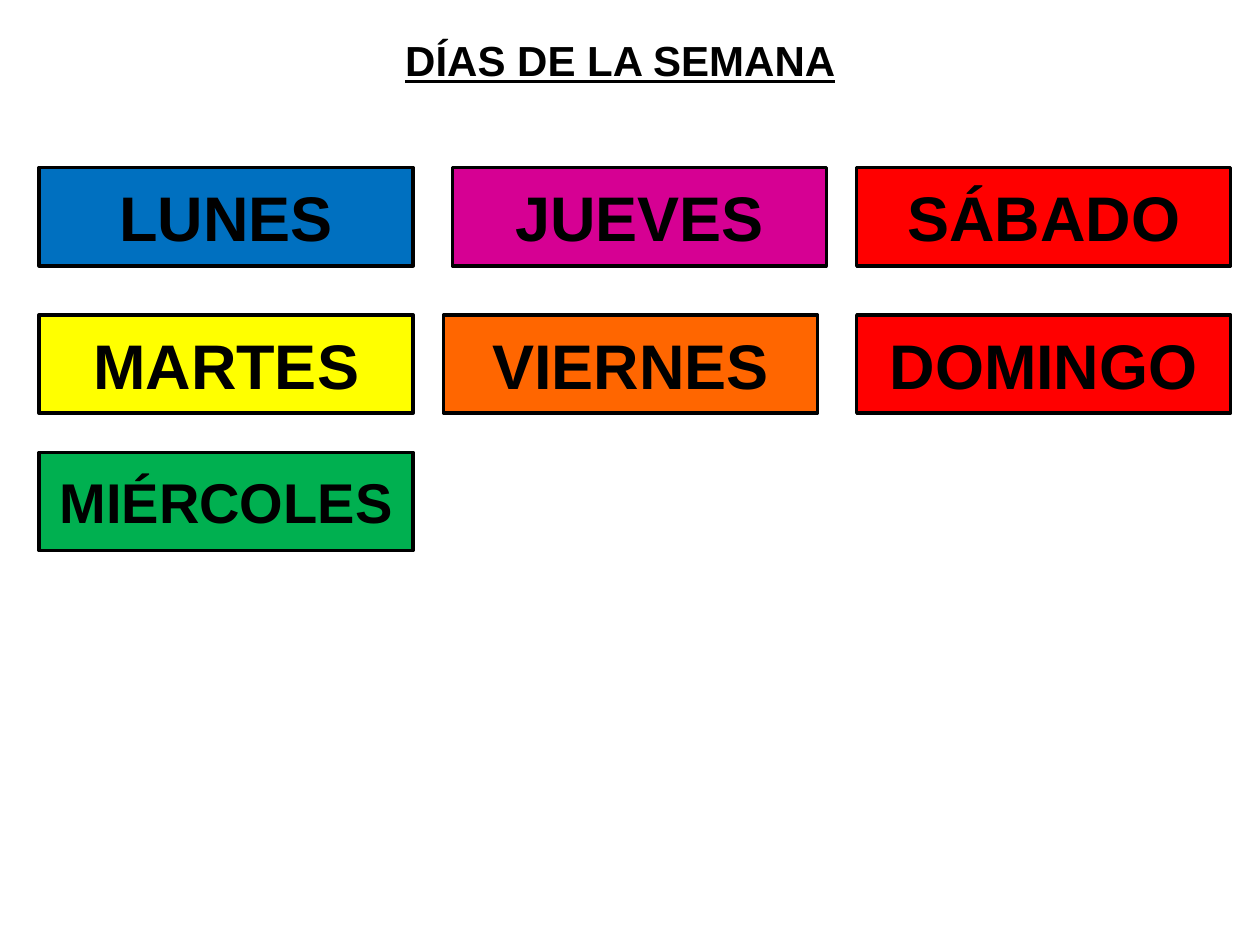
from dataclasses import dataclass

from pptx import Presentation
from pptx import util as u
from pptx.dml.color import RGBColor
from pptx.enum import shapes, text

BLACK = RGBColor(0x00, 0x00, 0x00)
BLUE = RGBColor(0x00, 0x70, 0xC0)
YELLOW = RGBColor(0xFF, 0xFF, 0x00)
GREEN = RGBColor(0x00, 0xB0, 0x50)
MAGENTA = RGBColor(0xD6, 0x00, 0x93)
ORANGE = RGBColor(0xFF, 0x66, 0x00)
RED = RGBColor(0xFF, 0x00, 0x00)

CARD_WIDTH, CARD_HEIGHT = u.Cm(7.54), u.Cm(1.98)
LEFT, MIDDLE, RIGHT = u.Cm(0.79), u.Cm(9.12), u.Cm(17.27)
FRIDAY_LEFT = u.Cm(8.94)
ROWS = [u.Cm(3.38), u.Cm(6.35), u.Cm(9.12)]


@dataclass
class Day:
    name: str
    left: u.Length
    row: int
    color: RGBColor
    size: int = 36


DAYS = [
    Day("LUNES", LEFT, 0, BLUE),
    Day("MARTES", LEFT, 1, YELLOW),
    Day("MIÉRCOLES", LEFT, 2, GREEN, 32),
    Day("JUEVES", MIDDLE, 0, MAGENTA),
    Day("VIERNES", FRIDAY_LEFT, 1, ORANGE),
    Day("SÁBADO", RIGHT, 0, RED),
    Day("DOMINGO", RIGHT, 1, RED),
]


def write(frame, words: str, size: int, underline: bool = False) -> None:
    frame.word_wrap = True
    paragraph = frame.paragraphs[0]
    paragraph.text = words
    paragraph.alignment = text.PP_ALIGN.CENTER
    font = paragraph.font
    font.name = "Arial"
    font.size = u.Pt(size)
    font.bold = True
    font.underline = underline
    font.color.rgb = BLACK


def draw_day(slide, day: Day) -> None:
    card = slide.shapes.add_shape(
        shapes.MSO_SHAPE.RECTANGLE, day.left, ROWS[day.row], CARD_WIDTH, CARD_HEIGHT
    )
    card.shadow.inherit = False
    card.fill.solid()
    card.fill.fore_color.rgb = day.color
    card.line.color.rgb = BLACK
    card.line.width = u.Pt(2)
    card.text_frame.vertical_anchor = text.MSO_ANCHOR.MIDDLE
    write(card.text_frame, day.name, day.size)


def draw_title(slide) -> None:
    title = slide.shapes.add_textbox(u.Cm(1.19), u.Cm(0.58), u.Cm(22.63), u.Cm(1.3))
    title.text_frame.auto_size = text.MSO_AUTO_SIZE.SHAPE_TO_FIT_TEXT
    write(title.text_frame, "DÍAS DE LA SEMANA", 24, underline=True)


def main() -> None:
    deck = Presentation()
    deck.slide_width, deck.slide_height = u.Cm(25.4), u.Cm(19.05)
    slide = deck.slides.add_slide(deck.slide_layouts[6])
    for day in DAYS:
        draw_day(slide, day)
    draw_title(slide)
    deck.save("out.pptx")


if __name__ == "__main__":
    main()
